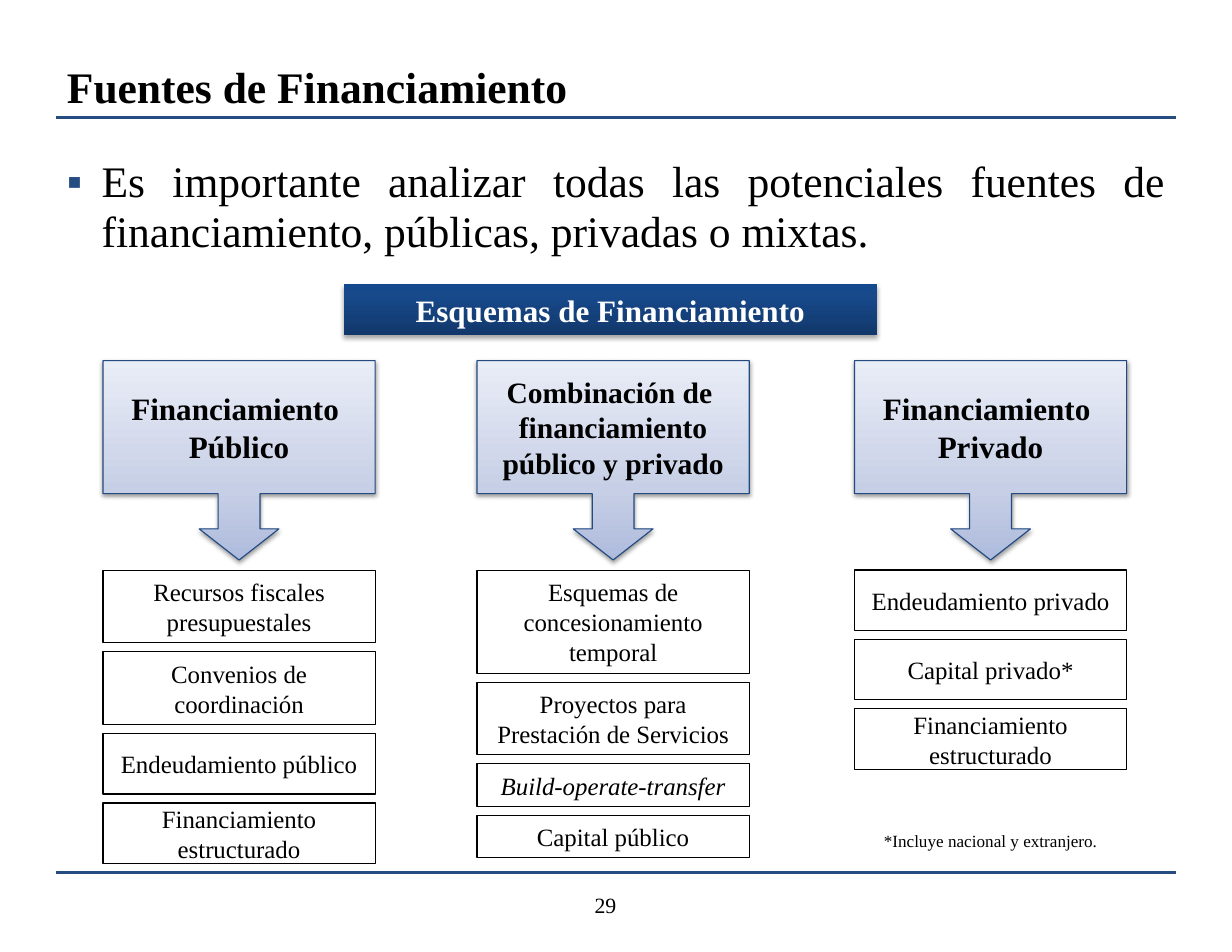
import pptx
import pptx.util
import pptx.dml.color
import pptx.enum.shapes
import pptx.enum.text
import pptx.oxml.ns
from lxml import etree

Inches, Pt = pptx.util.Inches, pptx.util.Pt
SHAPE = pptx.enum.shapes.MSO_SHAPE
ALIGN = pptx.enum.text.PP_ALIGN
ANCHOR = pptx.enum.text.MSO_ANCHOR
qn = pptx.oxml.ns.qn

FONT = "Times New Roman"
COLOURS = {"text": "000000", "white": "FFFFFF", "rule": "264D82", "callout_line": "234B81"}
CALLOUT_GRADIENT = [(0, "AEBBDD"), (35, "C7CFE6"), (100, "E9EDF6")]
BANNER_GRADIENT = [(0, "12386B"), (80, "17498B"), (100, "15498E")]
CALLOUT_ADJUSTMENTS = (0.21, 0.2, 0.156, 0.667)

TITLE = "Fuentes de Financiamiento"
MESSAGE = ("Es importante analizar todas las potenciales fuentes de "
           "financiamiento, públicas, privadas o mixtas.")
BANNER = "Esquemas de Financiamiento"
FOOTNOTE = "*Incluye nacional y extranjero."
PAGE_NUMBER = "29"

# Heights of the boxes under each callout
SMALL, MEDIUM, LARGE, XLARGE = 0.38, 0.54, 0.65, 0.92
COLUMNS = [
    {"left": 0.92, "heading": "Financiamiento \nPúblico", "size": 20, "items": [
        ("Recursos fiscales presupuestales", LARGE),
        ("Convenios de coordinación", LARGE),
        ("Endeudamiento público", MEDIUM),
        ("Financiamiento estructurado", MEDIUM)]},
    {"left": 4.26, "heading": "Combinación de \nfinanciamiento\npúblico y privado", "size": 19, "items": [
        ("Esquemas de concesionamiento temporal", XLARGE),
        ("Proyectos para Prestación de Servicios", LARGE),
        ("Build-operate-transfer", SMALL),
        ("Capital público", SMALL)]},
    {"left": 7.63, "heading": "Financiamiento \nPrivado", "size": 20, "items": [
        ("Endeudamiento privado", MEDIUM),
        ("Capital privado*", MEDIUM),
        ("Financiamiento estructurado", MEDIUM)]},
]
ITALIC_ITEMS = {"Build-operate-transfer"}

SLIDE_WIDTH, SLIDE_HEIGHT = 11, 8.5
MARGIN = 0.5
CONTENT_WIDTH = SLIDE_WIDTH - 2 * MARGIN
COLUMN_WIDTH = 2.43
CALLOUT_TOP, CALLOUT_HEIGHT = 3.22, 1.78
ITEMS_TOP, ITEM_GAP = 5.09, 0.08


def rgb(name):
    return pptx.dml.color.RGBColor.from_string(COLOURS[name])


def write(shape, text, size, colour="text", bold=False, italic=False,
          align=ALIGN.CENTER, anchor=ANCHOR.MIDDLE, insets=(0.11, 0.06), wrap=True):
    """Fill a shape with text; insets are horizontal and vertical, in inches."""
    frame = shape.text_frame
    frame.word_wrap = wrap
    frame.vertical_anchor = anchor
    frame.margin_left = frame.margin_right = Inches(insets[0])
    frame.margin_top = frame.margin_bottom = Inches(insets[1])
    frame.text = text
    for para in frame.paragraphs:
        para.alignment = align
        for span in para.runs:
            span.font.name = FONT
            span.font.size = Pt(size)
            span.font.bold = bold
            span.font.italic = italic
            span.font.color.rgb = rgb(colour)
    return frame


def add_text(page, place, text, size, **style):
    box = page.shapes.add_textbox(*map(Inches, place))
    return write(box, text, size, **style)


def add_shape(page, kind, place, line=None):
    shape = page.shapes.add_shape(kind, *map(Inches, place))
    shape.shadow.inherit = False
    shape.fill.background()
    if line:
        shape.line.color.rgb = rgb(line)
        shape.line.width = Pt(0.75)
    else:
        shape.line.fill.background()
    return shape


def add_rule(page, top, width):
    rule = page.shapes.add_connector(
        pptx.enum.shapes.MSO_CONNECTOR.STRAIGHT, Inches(MARGIN), Inches(top),
        Inches(MARGIN + CONTENT_WIDTH), Inches(top))
    rule.line.color.rgb = rgb("rule")
    rule.line.width = Pt(width)
    etree.SubElement(rule._element.spPr, qn("a:effectLst"))


def add_colour(parent, colour):
    return etree.SubElement(parent, qn("a:srgbClr"), val=colour)


def shade(shape, gradient, shadow_opacity, shadow_distance):
    """Give a shape an upward gradient and a soft shadow below it."""
    shape.fill.gradient()
    shape.fill.gradient_angle = 90
    properties = shape._element.spPr
    stops = properties.find(qn("a:gradFill")).find(qn("a:gsLst"))
    for stop in list(stops):
        stops.remove(stop)
    for position, colour in gradient:
        add_colour(etree.SubElement(stops, qn("a:gs"), pos=str(position * 1000)), colour)
    shadow = etree.SubElement(
        properties.find(qn("a:effectLst")), qn("a:outerShdw"), blurRad=str(Pt(3.1)),
        dist=str(Pt(shadow_distance)), dir=str(90 * 60000), rotWithShape="0")
    tint = add_colour(shadow, COLOURS["text"])
    etree.SubElement(tint, qn("a:alpha"), val=str(shadow_opacity * 1000))


def add_bullet(para, mark, indent):
    properties = para._p.get_or_add_pPr()
    properties.set("marL", str(Inches(indent)))
    properties.set("indent", str(-Inches(indent)))
    add_colour(etree.SubElement(properties, qn("a:buClr")), COLOURS["rule"])
    etree.SubElement(properties, qn("a:buFont"), typeface=FONT)
    etree.SubElement(properties, qn("a:buChar"), char=mark)


def add_column(page, column):
    left = column["left"]
    callout = add_shape(page, SHAPE.DOWN_ARROW_CALLOUT,
                        (left, CALLOUT_TOP, COLUMN_WIDTH, CALLOUT_HEIGHT), "callout_line")
    for index, value in enumerate(CALLOUT_ADJUSTMENTS):
        callout.adjustments[index] = value
    shade(callout, CALLOUT_GRADIENT, 38, 1.6)
    write(callout, column["heading"], column["size"], bold=True, insets=(0.1, 0.05))
    top = ITEMS_TOP
    for text, height in column["items"]:
        item = add_shape(page, SHAPE.RECTANGLE, (left, top, COLUMN_WIDTH, height), "text")
        write(item, text, 16, italic=text in ITALIC_ITEMS)
        top += height + ITEM_GAP


def main():
    deck = pptx.Presentation()
    deck.slide_width, deck.slide_height = Inches(SLIDE_WIDTH), Inches(SLIDE_HEIGHT)
    page = deck.slides.add_slide(deck.slide_layouts[6])

    add_rule(page, 1.05, 2)
    add_rule(page, 7.79, 1.5)
    add_text(page, (MARGIN, 0.43, CONTENT_WIDTH, 0.62), TITLE, 28, bold=True,
             align=ALIGN.LEFT, anchor=ANCHOR.BOTTOM, insets=(0.1, 0.05))
    message = add_text(page, (MARGIN, 1.31, CONTENT_WIDTH, 1.1), MESSAGE, 28,
                       align=ALIGN.JUSTIFY, anchor=ANCHOR.TOP, insets=(0.1, 0.1))
    message.paragraphs[0].line_spacing = 0.95
    add_bullet(message.paragraphs[0], "▪", 0.31)

    banner = add_shape(page, SHAPE.RECTANGLE, (3.07, 2.54, 4.76, 0.45))
    shade(banner, BANNER_GRADIENT, 35, 1.8)
    write(banner, BANNER, 20, colour="white", bold=True, wrap=False)

    for column in COLUMNS:
        add_column(page, column)

    add_text(page, (COLUMNS[-1]["left"], 7.36, COLUMN_WIDTH, 0.3), FOOTNOTE, 11)
    add_text(page, (5.21, 7.91, 0.55, 0.59), PAGE_NUMBER, 14,
             align=ALIGN.LEFT, anchor=ANCHOR.TOP, insets=(0.1, 0.05))
    deck.save("out.pptx")


if __name__ == "__main__":
    main()
